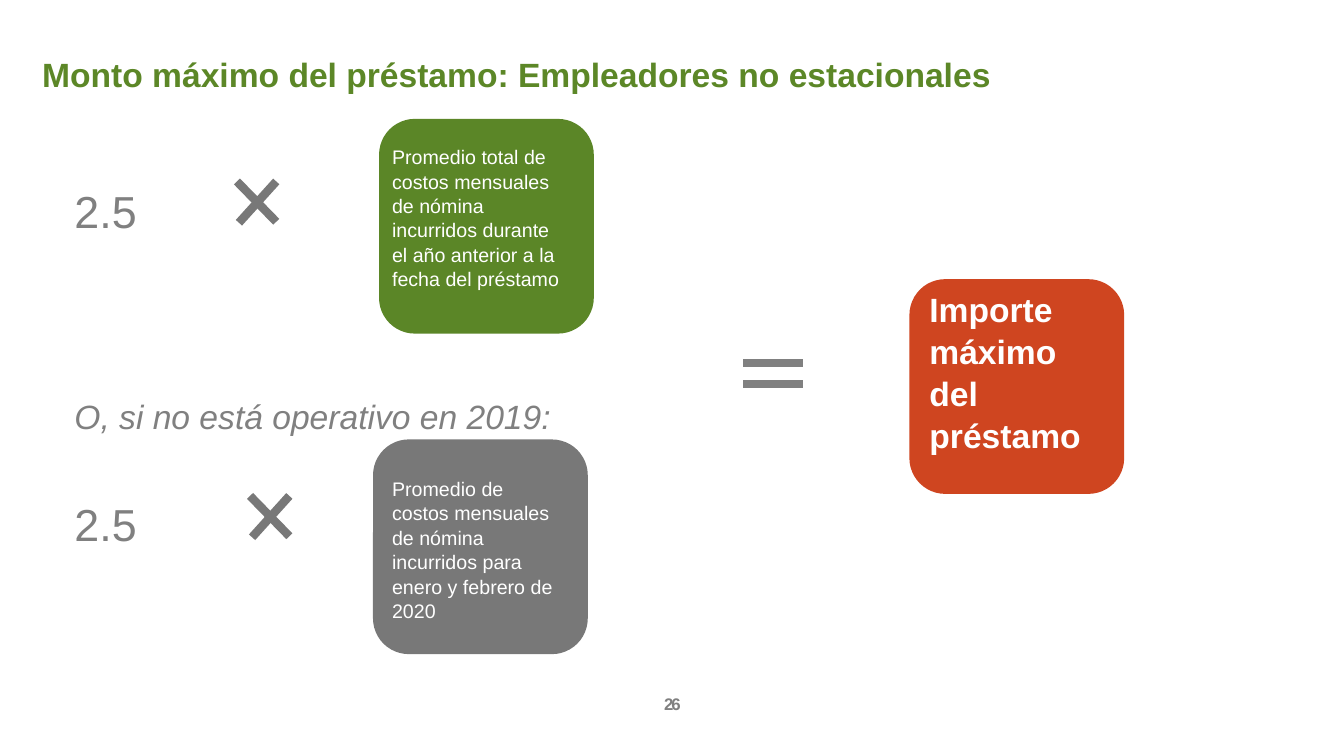
from typing import NamedTuple

from pptx import Presentation
from pptx import util as u
from pptx.dml.color import RGBColor
from pptx.enum import shapes, text
from pptx.oxml.ns import qn

GREEN, GRAY, RED = "5B8627", "787878", "CF4520"
SOFT, WHITE = "808080", "FFFFFF"
SIDE = 2.13


class Card(NamedTuple):
    left: float
    top: float
    fill: str


class Label(NamedTuple):
    words: str
    left: float
    top: float
    width: float
    height: float
    size: int
    color: str = SOFT
    bold: bool = False
    slant: bool = False
    gap: float = 1.0
    align: text.PP_ALIGN = text.PP_ALIGN.LEFT
    track: int = 0


class Stroke(NamedTuple):
    left: float
    top: float
    right: float
    end: float
    color: str


CARDS = [Card(3.76, 1.18, GREEN), Card(3.7, 4.36, GRAY), Card(9.02, 2.77, RED)]

LABELS = [
    Label("26", 6.48, 6.83, 0.37, 0.4, 12, bold=True,
          align=text.PP_ALIGN.RIGHT, track=-150),
    Label("Monto máximo del préstamo: Empleadores no estacionales",
          0.32, 0.49, 10.83, 0.45, 24, "5C8727", bold=True),
    Label("2.5", 0.64, 1.77, 1.2, 0.6, 32),
    Label("O, si no está operativo en 2019:",
          0.64, 3.88, 6, 0.5, 24, slant=True),
    Label("2.5", 0.64, 4.88, 1.2, 0.6, 32),
    Label("Importe máximo del préstamo",
          9.12, 2.8, 1.93, 1.75, 24, WHITE, bold=True, gap=1.04),
    Label("Promedio de costos mensuales de nómina incurridos para enero "
          "y febrero de 2020", 3.79, 4.67, 1.91, 1.75, 14, WHITE, gap=1.04),
    Label("Promedio total de costos mensuales de nómina incurridos durante "
          "el año anterior a la fecha del préstamo",
          3.79, 1.38, 1.95, 1.75, 14, WHITE, gap=1.04),
]


def tint(code: str) -> RGBColor:
    return RGBColor.from_string(code)


def cross(left: float, top: float) -> list[Stroke]:
    """Give the two strokes of a times sign."""
    return [Stroke(left, top, left + 0.39, top + 0.4, GRAY),
            Stroke(left + 0.02, top + 0.41, left + 0.39, top, GRAY)]


def add_card(slide, card: Card) -> None:
    box = slide.shapes.add_shape(
        shapes.MSO_SHAPE.ROUNDED_RECTANGLE, u.Inches(card.left),
        u.Inches(card.top), u.Inches(SIDE), u.Inches(SIDE))
    box.shadow.inherit = False
    box.fill.solid()
    box.fill.fore_color.rgb = tint(card.fill)
    box.line.fill.background()


def add_label(slide, label: Label) -> None:
    box = slide.shapes.add_textbox(
        u.Inches(label.left), u.Inches(label.top),
        u.Inches(label.width), u.Inches(label.height))
    frame = box.text_frame
    frame.word_wrap = True
    frame.text = label.words
    para = frame.paragraphs[0]
    para.alignment = label.align
    para.line_spacing = label.gap
    run = para.runs[0]
    run.font.name = "Arial"
    run.font.size = u.Pt(label.size)
    run.font.bold = label.bold
    run.font.italic = label.slant
    run.font.color.rgb = tint(label.color)
    if label.track:
        run._r.get_or_add_rPr().set("spc", str(label.track))


def add_stroke(slide, stroke: Stroke) -> None:
    line = slide.shapes.add_connector(
        shapes.MSO_CONNECTOR.STRAIGHT, u.Inches(stroke.left),
        u.Inches(stroke.top), u.Inches(stroke.right), u.Inches(stroke.end))
    line.line.color.rgb = tint(stroke.color)
    line.line.width = u.Pt(6)
    props = line._element.spPr
    props.append(props.makeelement(qn("a:effectLst"), {}))


def main() -> None:
    deck = Presentation()
    deck.slide_width, deck.slide_height = u.Inches(13.33), u.Inches(7.5)
    slide = deck.slides.add_slide(deck.slide_layouts[6])
    for card in CARDS:
        add_card(slide, card)
    for label in LABELS:
        add_label(slide, label)
    equals = [Stroke(7.37, y, 7.96, y, SOFT) for y in (3.6, 3.81)]
    for stroke in cross(2.48, 4.92) + cross(2.35, 1.8) + equals:
        add_stroke(slide, stroke)
    deck.save("out.pptx")


if __name__ == "__main__":
    main()
